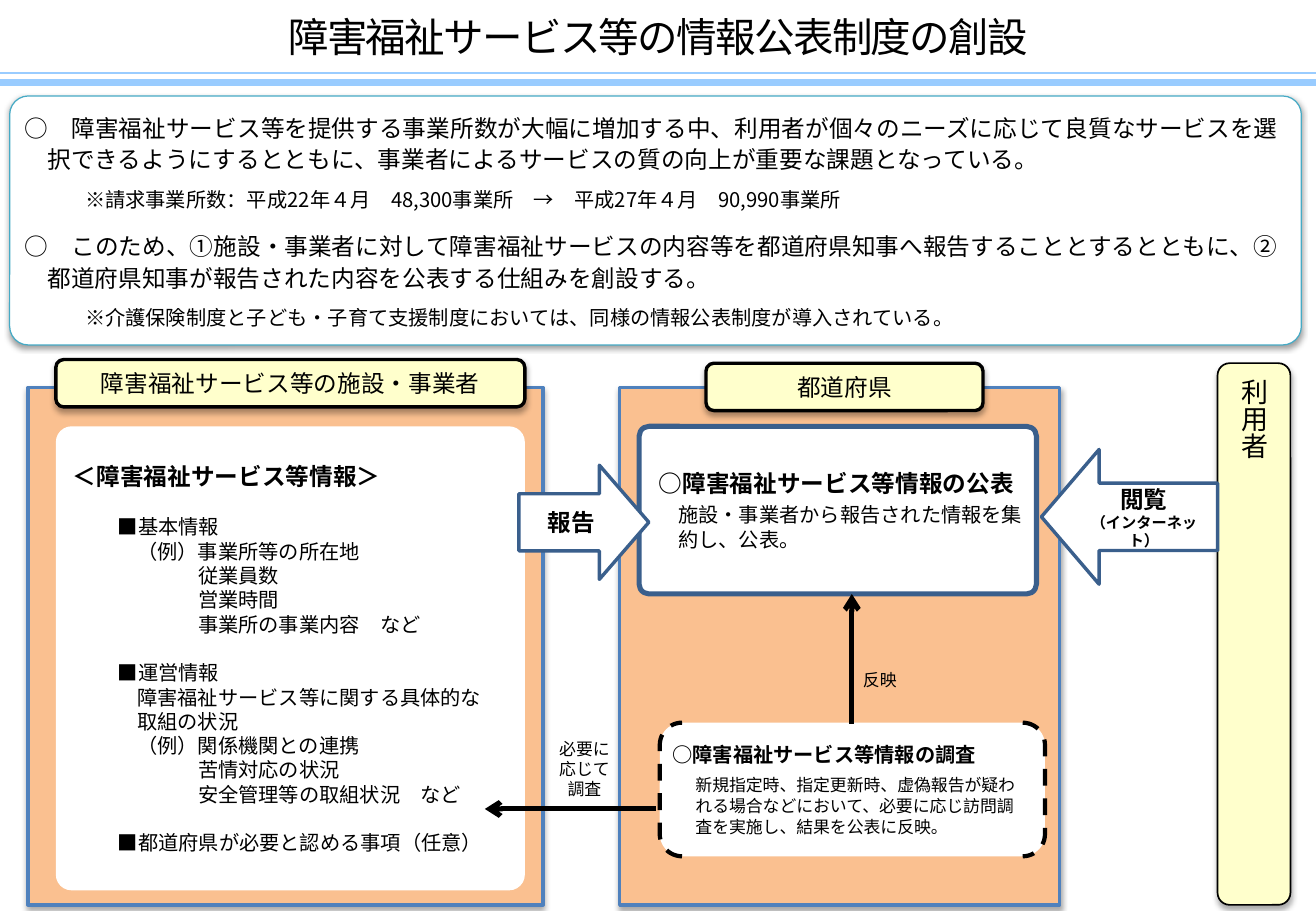
"""Build the slide on the public disclosure system for disability services."""
import pptx
import pptx.dml.color
import pptx.enum.shapes
import pptx.enum.text
import pptx.oxml
import pptx.oxml.ns
import pptx.util
from dataclasses import dataclass

PX = 9144
SIZE = (1083, 750)
TITLE = "障害福祉サービス等の情報公表制度の創設"

# (text, indent, hanging, size, bold, line pitch, space before)
SUMMARY = [
    ("○　障害福祉サービス等を提供する事業所数が大幅に増加する中、利用者が個々のニーズに応じて良質なサービスを選択できるようにするとともに、事業者によるサービスの質の向上が重要な課題となっている。", 19, -19, 14, False, 18.5, 0),
    ("※請求事業所数：平成22年４月　48,300事業所　→　平成27年４月　90,990事業所", 50, 0, 12, False, 16, 6.5),
    ("○　このため、①施設・事業者に対して障害福祉サービスの内容等を都道府県知事へ報告することとするとともに、②都道府県知事が報告された内容を公表する仕組みを創設する。", 19, -19, 14, False, 18.5, 10.5),
    ("※介護保険制度と子ども・子育て支援制度においては、同様の情報公表制度が導入されている。", 50, 0, 12, False, 16, 6.5),
]
HEAD, ITEM, SUB, CASE = 0, 37, 53, 103
FACTS = [
    ("＜障害福祉サービス等情報＞", HEAD, 0),
    ("■基本情報", ITEM, 14.4),
    ("（例）事業所等の所在地", SUB, 0),
    ("従業員数", CASE, 0),
    ("営業時間", CASE, 0),
    ("事業所の事業内容　など", CASE, 0),
    ("■運営情報", ITEM, 14.4),
    ("障害福祉サービス等に関する具体的な", SUB, 0),
    ("取組の状況", SUB, 0),
    ("（例）関係機関との連携", SUB, 0),
    ("苦情対応の状況", CASE, 0),
    ("安全管理等の取組状況　など", CASE, 0),
    ("■都道府県が必要と認める事項（任意）", ITEM, 14.4),
]
PUBLISH = [
    ("○障害福祉サービス等情報の公表", 4, 0, 14, True, 17, 0),
    ("施設・事業者から報告された情報を集約し、公表。", 20, 0, 12, False, 15, 2),
]
SURVEY = [
    ("○障害福祉サービス等情報の調査", 0, 0, 12, True, 14.4, 0),
    ("新規指定時、指定更新時、虚偽報告が疑われる場合などにおいて、必要に応じ訪問調査を実施し、結果を公表に反映。", 19, 0, 10, False, 12.5, 4),
]
VIEW = [
    ("閲覧", 0, 0, 14, True, 17, 0),
    ("（インターネット）", 0, 0, 9, True, 10.7, 0),
]
PANELS = [(23, 319, 424, 426), (510, 319, 362, 426)]
HEADERS = [
    ("障害福祉サービス等の施設・事業者", (46, 296, 386, 39)),
    ("都道府県", (581, 299, 228, 39)),
]
NOTES = [
    (["反映"], (699, 545, 50, 30)),
    (["必要に", "応じて", "調査"], (441, 603, 80, 60)),
]
RULES = [(60, 0.75), (68, 4.5)]
ARROWS = [((540, 666), (399, 666)), ((701, 596), (701, 489))]


@dataclass(frozen=True)
class Theme:
    """Colours and type of the slide."""
    ink: str = "000000"
    white: str = "FFFFFF"
    cream: str = "FFFFCC"
    peach: str = "FAC090"
    blue: str = "4F81BD"
    navy: str = "3A5F8C"
    teal: str = "46AAC5"
    sky: str = "99CCFF"
    face: str = "Noto Sans CJK JP"
    latin: str = "Calibri"
    title: int = 24
    user: int = 16
    head: int = 14
    text: int = 12
    note: int = 10


T = Theme()
KIND = pptx.enum.shapes.MSO_SHAPE
LEFT = pptx.enum.text.PP_ALIGN.LEFT
MID = pptx.enum.text.PP_ALIGN.CENTER
Pt = pptx.util.Pt
qn = pptx.oxml.ns.qn


def px(*nums):
    return [round(n * PX) for n in nums]


def rgb(code):
    return pptx.dml.color.RGBColor.from_string(code)


def node(root, tag, **attrs):
    item = root.makeelement(qn(tag), attrs)
    root.append(item)
    return item


def write(shape, rows, align=LEFT, face=T.face, inset=(0, 0, 0, 0)):
    frame = shape.text_frame
    frame.word_wrap = True
    frame.auto_size = pptx.enum.text.MSO_AUTO_SIZE.NONE
    frame.vertical_anchor = pptx.enum.text.MSO_ANCHOR.MIDDLE
    (frame.margin_left, frame.margin_top,
     frame.margin_right, frame.margin_bottom) = px(*inset)
    for i, (text, left, hang, size, bold, pitch, gap) in enumerate(rows):
        para = frame.add_paragraph() if i else frame.paragraphs[0]
        para.text = text
        para.alignment = align
        para.line_spacing = Pt(pitch)
        para.space_before, para.space_after = Pt(gap), Pt(0)
        font = para.font
        font.size, font.bold, font.name = Pt(size), bold, face
        font.color.rgb = rgb(T.ink)
        node(font._element, "a:ea", typeface=T.face)
        props = para._p.get_or_add_pPr()
        props.set("marL", str(left * PX))
        props.set("indent", str(hang * PX))
        props.insert_element_before(
            props.makeelement(qn("a:buNone"), {}), "a:tabLst", "a:defRPr")


def label(lines, size, bold=False):
    return [(text, 0, 0, size, bold, size * 1.2, 0) for text in lines]


def draw(slide, kind, box, fill, line=None, width=1, adj=(), shade=None):
    shape = slide.shapes.add_shape(kind, *px(*box))
    shape.shadow.inherit = False
    for i, part in enumerate(adj):
        shape.adjustments[i] = part
    shape.fill.solid()
    shape.fill.fore_color.rgb = rgb(fill)
    if line:
        shape.line.color.rgb = rgb(line)
        shape.line.width = Pt(width)
    else:
        shape.line.fill.background()
    if shade:
        alpha, blur, dist = shade
        drop = node(shape._element.spPr.find(qn("a:effectLst")), "a:outerShdw",
                    blurRad=str(Pt(blur)), dist=str(Pt(dist)),
                    dir="5400000", rotWithShape="0")
        tone = node(drop, "a:srgbClr", val=T.ink)
        node(tone, "a:alpha", val=str(alpha * 1000))
    return shape


def link(slide, start, end, color, width, tip=False):
    line = slide.shapes.add_connector(
        pptx.enum.shapes.MSO_CONNECTOR.STRAIGHT, *px(*start, *end))
    line.line.color.rgb = rgb(color)
    line.line.width = Pt(width)
    if tip:
        node(line.line._get_or_add_ln(), "a:tailEnd", type="arrow")
    node(line._element.spPr, "a:effectLst")


def place(slide, shape, box):
    shape.left, shape.top, shape.width, shape.height = px(*box)
    slide.shapes._spTree.append(shape._element)


def main():
    deck = pptx.Presentation()
    deck.slide_width, deck.slide_height = px(*SIZE)
    slide = deck.slides.add_slide(deck.slide_layouts[3])
    title, summary, facts = slide.placeholders
    soft = (32, 3.5, 2.2)

    place(slide, title, (0, 0, SIZE[0], 60))
    write(title, label([TITLE], T.title), MID)
    title.text_frame.paragraphs[0].font._element.set("spc", "-100")
    for y, width in RULES:
        link(slide, (0, y), (SIZE[0], y), T.sky, width)

    draw(slide, KIND.ROUNDED_RECTANGLE, (8, 79, 1063, 205), T.white,
         T.teal, 0.75, [0.075], (38, 3.1, 1.6))
    place(slide, summary, (20, 79, 1037, 205))
    write(summary, SUMMARY)

    user = draw(slide, KIND.ROUNDED_RECTANGLE, (1002, 299, 60, 446), T.cream,
                T.ink, 1, shade=soft)
    write(user, label(["利用者"], T.user), inset=(5, 10, 5, 5))
    user.text_frame._txBody.bodyPr.set("vert", "eaVert")
    for box in PANELS:
        draw(slide, KIND.RECTANGLE, box, T.peach, T.blue, 2, shade=soft)
    for text, box in HEADERS:
        head = draw(slide, KIND.ROUNDED_RECTANGLE, box, T.cream, T.ink, 2,
                    shade=soft)
        write(head, label([text], T.head), MID)

    view = draw(slide, KIND.LEFT_ARROW, (857, 370, 145, 111), T.white,
                T.navy, 2, [0.5, 0.428])
    write(view, VIEW, MID, T.latin, (15, 5, 15, 5))
    publish = draw(slide, KIND.ROUNDED_RECTANGLE, (526, 351, 327, 138),
                   T.white, T.navy, 3, [0.059])
    write(publish, PUBLISH, inset=(10, 5, 5, 5))
    draw(slide, KIND.ROUNDED_RECTANGLE, (46, 351, 386, 382), T.white,
         adj=[0.034])
    place(slide, facts, (60, 351, 360, 382))
    write(facts, [(text, left, 0, T.text if left else T.head, not left,
                   14.4 if left else 17, gap) for text, left, gap in FACTS])
    report = draw(slide, KIND.RIGHT_ARROW, (427, 383, 107, 94), T.white,
                  T.navy, 2, [0.5, 0.433])
    write(report, label(["報告"], T.head, True), MID, T.latin)

    survey = draw(slide, KIND.DOUBLE_BRACKET, (543, 595, 317, 110), T.white,
                  T.ink, 2.5)
    survey.line.dash_style = pptx.enum.dml.MSO_LINE.DASH
    write(survey, SURVEY, inset=(5, 0, 12, 0))
    for lines, box in NOTES:
        note = slide.shapes.add_textbox(*px(*box))
        write(note, label(lines, T.note), MID, T.latin)
    for start, end in ARROWS:
        link(slide, start, end, T.ink, 3, True)
    deck.save("out.pptx")


if __name__ == "__main__":
    main()
